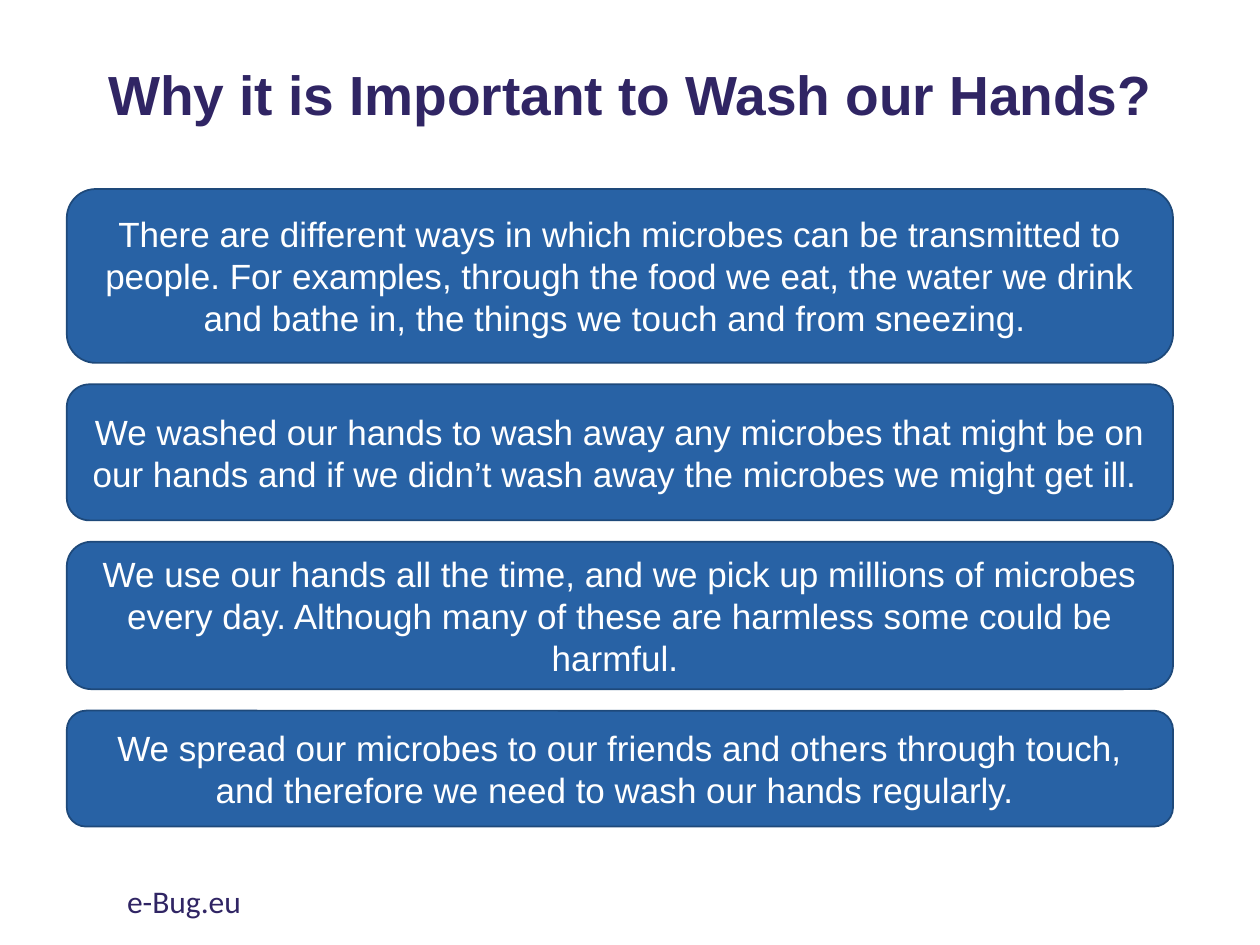
"""Build the hand-washing slide with four stacked statements."""
from pptx import Presentation
from pptx.dml.color import RGBColor
from pptx.enum.shapes import MSO_SHAPE
from pptx.enum.text import MSO_ANCHOR, MSO_AUTO_SIZE, PP_ALIGN
from pptx.util import Inches, Pt

ROUNDED = MSO_SHAPE.ROUNDED_RECTANGLE
MIDDLE, TOP = MSO_ANCHOR.MIDDLE, MSO_ANCHOR.TOP
CENTER, LEFT = PP_ALIGN.CENTER, PP_ALIGN.LEFT
NO_FIT = MSO_AUTO_SIZE.NONE
TITLE_ONLY = 5

NAVY = RGBColor(0x30, 0x25, 0x64)
BLUE = RGBColor(0x28, 0x62, 0xA5)
EDGE = RGBColor(0x1E, 0x49, 0x7A)
WHITE = RGBColor(0xFF, 0xFF, 0xFF)

REASONS = [
    (1.38, "There are different ways in which microbes can be transmitted to "
           "people. For examples, through the food we eat, the water we drink "
           "and bathe in, the things we touch and from sneezing. "),
    (1.08, "We washed our hands to wash away any microbes that might be on our "
           "hands and if we didn’t wash away the microbes we might get ill. "),
    (1.17, "We use our hands all the time, and we pick up millions of microbes "
           "every day. Although many of these are harmless some could be harmful. "),
    (0.92, "We spread our microbes to our friends and others through touch, "
           "and therefore we need to wash our hands regularly. "),
]
CARD_LEFT, CARD_TOP, CARD_WIDTH, CARD_GAP = 0.53, 1.5, 8.78, 0.17


class SlideBuilder:
    """Hold the text style and the current slide."""

    def __init__(self, slide):
        self.s = slide

    def add_text(self, sp, text, size, color, font="Arial", bold=False,
                 align=CENTER, anchor=MIDDLE):
        tf = sp.text_frame
        tf.word_wrap = True
        tf.auto_size = NO_FIT
        tf.vertical_anchor = anchor
        p = tf.paragraphs[0]
        p.alignment = align
        r = p.add_run()
        r.text = text
        r.font.name = font
        r.font.size = Pt(size)
        r.font.bold = bold
        r.font.color.rgb = color
        return p

    def title(self, text, left, top, width, height):
        sp = self.s.shapes.title
        sp.left, sp.top = Inches(left), Inches(top)
        sp.width, sp.height = Inches(width), Inches(height)
        p = self.add_text(sp, text, 31.5, NAVY, bold=True)
        p.line_spacing = 0.9

    def card(self, text, left, top, width, height):
        sp = self.s.shapes.add_shape(ROUNDED, Inches(left), Inches(top),
                                     Inches(width), Inches(height))
        sp.shadow.inherit = False
        sp.fill.solid()
        sp.fill.fore_color.rgb = BLUE
        sp.line.color.rgb = EDGE
        sp.line.width = Pt(1)
        self.add_text(sp, text, 20, WHITE)

    def label(self, text, left, top, width, height):
        sp = self.s.shapes.add_textbox(Inches(left), Inches(top),
                                       Inches(width), Inches(height))
        self.add_text(sp, text, 18, NAVY, font="Calibri", align=LEFT, anchor=TOP)


def main():
    prs = Presentation()
    prs.slide_width, prs.slide_height = Inches(10), Inches(7.5)
    builder = SlideBuilder(prs.slides.add_slide(prs.slide_layouts[TITLE_ONLY]))
    builder.title("Why it is Important to Wash our Hands?", 0.69, 0.32, 8.62, 0.91)
    top = CARD_TOP
    for height, text in REASONS:
        builder.card(text, CARD_LEFT, top, CARD_WIDTH, height)
        top += height + CARD_GAP
    builder.label("e-Bug.eu", 0.91, 6.95, 3.38, 0.4)
    prs.save("out.pptx")


if __name__ == "__main__":
    main()
